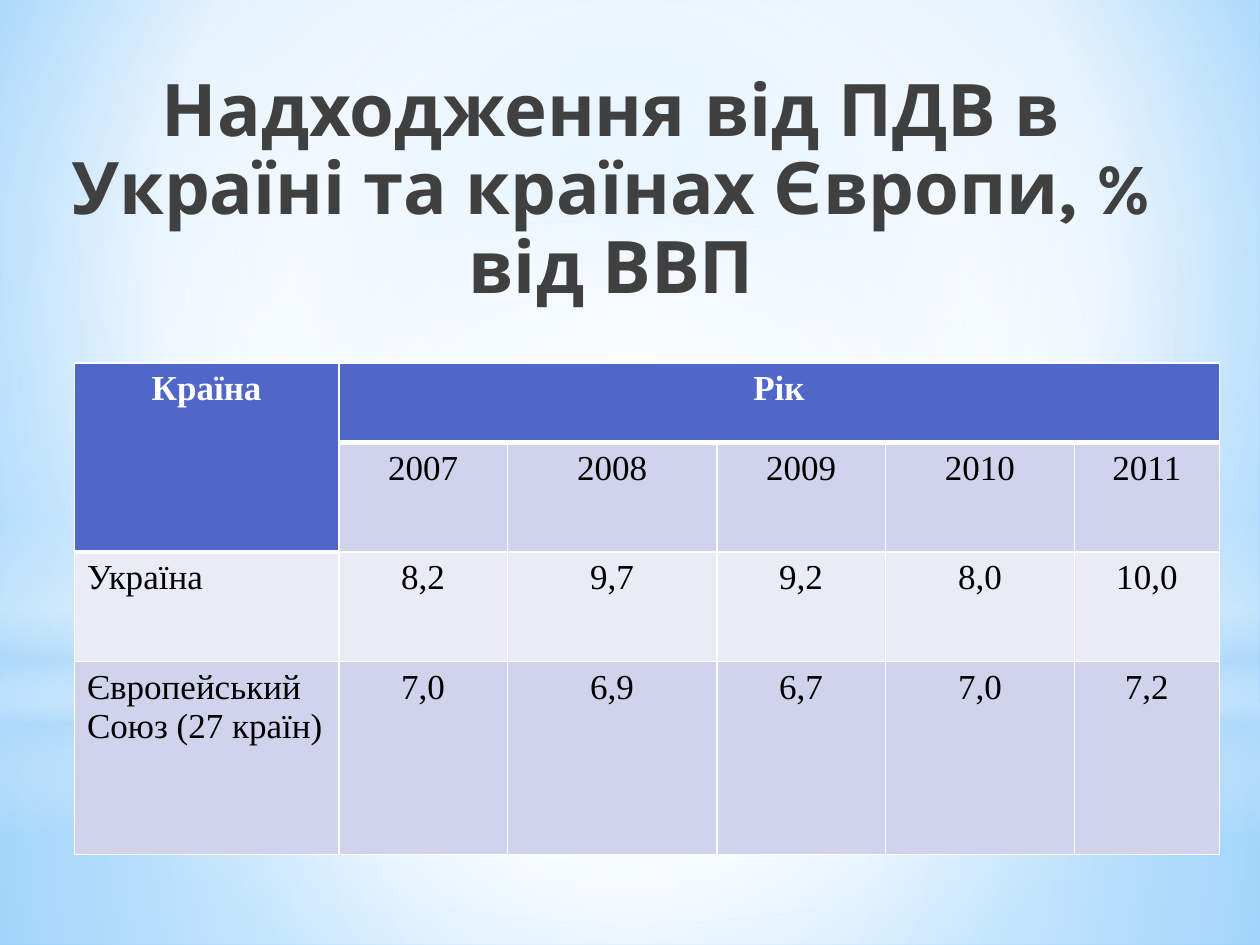
from dataclasses import dataclass

from lxml import etree
from pptx import Presentation
from pptx.dml.color import RGBColor
from pptx.enum.shapes import MSO_SHAPE
from pptx.enum.text import MSO_ANCHOR, PP_ALIGN
from pptx.oxml import parse_xml
from pptx.oxml.ns import nsdecls, qn
from pptx.util import Cm, Pt

RECTANGLE, OVAL = MSO_SHAPE.RECTANGLE, MSO_SHAPE.OVAL
LEFT, CENTER = PP_ALIGN.LEFT, PP_ALIGN.CENTER
TOP = MSO_ANCHOR.TOP


@dataclass(frozen=True)
class Theme:
    title_font: str = "Karla"
    table_font: str = "Times New Roman"
    title_size: float = 41.4
    table_size: float = 20
    title: str = "404040"
    text: str = "000000"
    white: str = "FFFFFF"
    header: str = "4E67C8"
    bands: tuple = ("D0D3EB", "E9EBF5")
    haze: str = "B4DCFA"
    sky_edge: str = "9ED5FF"
    sky_deep: str = "5BB9FF"


THEME = Theme()
MIDDLE = (50, 50, 50, 50)
COLUMN_WIDTHS = (5.33, 3.4, 4.22, 3.4, 3.81, 2.92)
ROW_HEIGHTS = (1.6, 2.21, 2.21, 3.89)
ROWS = (
    ("Країна", "Рік", "", "", "", ""),
    ("", "2007", "2008", "2009", "2010", "2011"),
    ("Україна", "8,2", "9,7", "9,2", "8,0", "10,0"),
    ("Європейський Союз (27 країн)", "7,0", "6,9", "6,7", "7,0", "7,2"),
)


def set_gradient(holder, stops, center=None):
    gradient = parse_xml(f'<a:gradFill {nsdecls("a")} rotWithShape="1"/>')
    stop_list = etree.SubElement(gradient, qn("a:gsLst"))
    for position, color, opacity in stops:
        stop = etree.SubElement(stop_list, qn("a:gs"), pos=str(position * 1000))
        tint = etree.SubElement(stop, qn("a:srgbClr"), val=color)
        if opacity < 100:
            etree.SubElement(tint, qn("a:alpha"), val=str(opacity * 1000))
    if center:
        route = etree.SubElement(gradient, qn("a:path"))
        route.set("path", "circle")
        sides = {side: str(value * 1000) for side, value in zip("ltrb", center)}
        etree.SubElement(route, qn("a:fillToRect"), sides)
    else:
        etree.SubElement(gradient, qn("a:lin"), ang="5400000", scaled="0")
    solid = holder.find(qn("a:solidFill"))
    holder.replace(solid, gradient)


def paint_background(page):
    page.background.fill.solid()
    stops = ((0, THEME.sky_edge, 100), (60, THEME.white, 100), (100, THEME.sky_deep, 100))
    set_gradient(page.element.find(f".//{qn('p:bgPr')}"), stops, (20, 10, 20, 60))


def add_glow(page, kind, top, height, stops, center=None):
    shape = page.shapes.add_shape(kind, 0, Cm(top), Cm(25.4), Cm(height))
    shape.shadow.inherit = False
    shape.line.fill.background()
    shape.fill.solid()
    set_gradient(shape.element.spPr, stops, center)


def write(paragraph, text, color, **formats):
    span = paragraph.add_run()
    span.text = text
    span.font.color.rgb = RGBColor.from_string(color)
    for name, value in formats.items():
        setattr(span.font, name, value)


def add_title(page, text):
    box = page.shapes.add_textbox(Cm(0.89), Cm(1.37), Cm(22.86), Cm(3.18))
    frame = box.text_frame
    frame.word_wrap = True
    frame.vertical_anchor = TOP
    para = frame.paragraphs[0]
    para.alignment = CENTER
    para.line_spacing = 0.9
    write(para, text, THEME.title, name=THEME.title_font,
          size=Pt(THEME.title_size), bold=True)


def set_borders(cell, bottom_width):
    properties = cell._tc.get_or_add_tcPr()
    widths = {"lnL": 1, "lnR": 1, "lnT": 1, "lnB": bottom_width}
    for index, (side, width) in enumerate(widths.items()):
        border = parse_xml(
            f'<a:{side} {nsdecls("a")} w="{Pt(width)}"><a:solidFill>'
            f'<a:srgbClr val="{THEME.white}"/></a:solidFill></a:{side}>')
        properties.insert(index, border)


def fill_cell(cell, text, row, column):
    is_header = row == 0 or (row == 1 and column == 0)
    cell.fill.solid()
    color = THEME.header if is_header else THEME.bands[(row - 1) % 2]
    cell.fill.fore_color.rgb = RGBColor.from_string(color)
    set_borders(cell, 3 if is_header else 1)
    if text:
        para = cell.text_frame.paragraphs[0]
        para.alignment = CENTER if is_header or column else LEFT
        write(para, text, THEME.white if is_header else THEME.text,
              name=THEME.table_font, size=Pt(THEME.table_size), bold=is_header)


def add_revenue_table(page):
    frame = page.shapes.add_table(
        len(ROWS), len(COLUMN_WIDTHS), Cm(1.5), Cm(7.32),
        Cm(sum(COLUMN_WIDTHS)), Cm(sum(ROW_HEIGHTS)))
    table = frame.table
    table.first_row = table.horz_banding = False
    for column, width in zip(table.columns, COLUMN_WIDTHS):
        column.width = Cm(width)
    for row, height in zip(table.rows, ROW_HEIGHTS):
        row.height = Cm(height)
    for row, texts in enumerate(ROWS):
        for column, text in enumerate(texts):
            fill_cell(table.cell(row, column), text, row, column)
    table.cell(0, 0).merge(table.cell(1, 0))
    table.cell(0, 1).merge(table.cell(0, 5))


def main():
    deck = Presentation()
    deck.slide_width, deck.slide_height = Cm(25.4), Cm(19.05)
    page = deck.slides.add_slide(deck.slide_layouts[6])
    white, haze = THEME.white, THEME.haze
    paint_background(page)
    add_glow(page, RECTANGLE, 14.17, 4.88,
             ((0, white, 91), (37, white, 76), (100, haze, 79)), MIDDLE)
    add_glow(page, RECTANGLE, 0, 14.17,
             ((0, white, 89), (48, white, 62), (100, haze, 79)), MIDDLE)
    add_glow(page, RECTANGLE, 10.46, 6.35,
             ((0, white, 0), (29, white, 30), (45, haze, 40),
              (55, white, 26), (65, haze, 60), (100, white, 0)))
    add_glow(page, OVAL, 4.45, 14.17, ((0, white, 100), (56, white, 0)), MIDDLE)
    add_title(page, "Надходження від ПДВ в Україні та країнах Європи, % від ВВП")
    add_revenue_table(page)
    deck.save("out.pptx")


if __name__ == "__main__":
    main()
